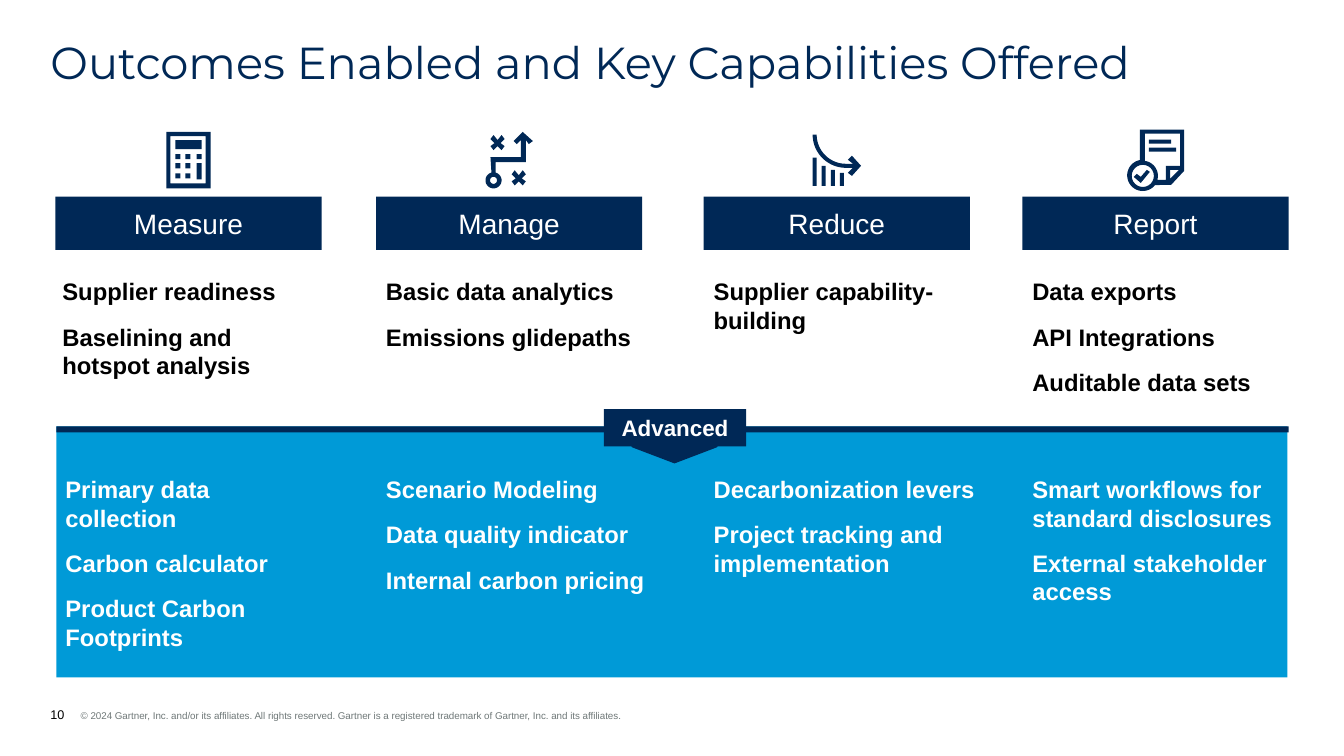
import math

import pptx
import pptx.dml.color
import pptx.enum.shapes
import pptx.enum.text
import pptx.oxml.ns
import pptx.util
from lxml import etree

PX = 9144  # EMU in one px, 100 px to the inch

NAVY = pptx.dml.color.RGBColor(0x00, 0x28, 0x56)
BLUE = pptx.dml.color.RGBColor(0x00, 0x9A, 0xD7)
GREY = pptx.dml.color.RGBColor(0x6F, 0x78, 0x78)
BLACK = pptx.dml.color.RGBColor(0x00, 0x00, 0x00)
WHITE = pptx.dml.color.RGBColor(0xFF, 0xFF, 0xFF)

SHAPE = pptx.enum.shapes.MSO_SHAPE
ANCHOR = pptx.enum.text.MSO_ANCHOR
ALIGN = pptx.enum.text.PP_ALIGN


def emu(*lengths):
    return [pptx.util.Emu(round(length * PX)) for length in lengths]


def set_font(font, size, color, bold=False, name="Arial"):
    font.name, font.bold = name, bold
    font.size = pptx.util.Pt(size)
    font.color.rgb = color


def set_frame(frame, anchor, margins):
    """Margins are left, top, right and bottom in px."""
    frame.word_wrap = True
    frame.auto_size = pptx.enum.text.MSO_AUTO_SIZE.NONE
    frame.vertical_anchor = anchor
    (frame.margin_left, frame.margin_top,
     frame.margin_right, frame.margin_bottom) = emu(*margins)


def paint(shape, color):
    shape.shadow.inherit = False
    shape.fill.solid()
    shape.fill.fore_color.rgb = color
    shape.line.fill.background()


def add_block(page, box, color, kind=SHAPE.RECTANGLE):
    block = page.shapes.add_shape(kind, *emu(*box))
    paint(block, color)
    return block


def add_label(page, box, text, size, bold=False):
    frame = add_block(page, box, NAVY).text_frame
    set_frame(frame, ANCHOR.MIDDLE, (0, 5, 0, 5))
    para = frame.paragraphs[0]
    para.text = text
    para.alignment = ALIGN.CENTER
    set_font(para.runs[0].font, size, WHITE, bold)


def add_list(page, box, items, color):
    frame = page.shapes.add_textbox(*emu(*box)).text_frame
    set_frame(frame, ANCHOR.TOP, (10, 5, 0, 5))
    for index, item in enumerate(items):
        para = frame.add_paragraph() if index else frame.paragraphs[0]
        para.text = item
        para.space_before = pptx.util.Pt(6 if index else 0)
        para.space_after = pptx.util.Pt(6)
        set_font(para.runs[0].font, 17, color, bold=True)


def rect(left, top, width, height):
    right, bottom = left + width, top + height
    return [(left, top), (right, top), (right, bottom), (left, bottom)]


def arc(x, y, radius, start=0, end=360, steps=24):
    """Points on a circle; degrees run clockwise from the right."""
    turns = [math.radians(start + (end - start) * step / steps) for step in range(steps + 1)]
    return [(x + radius * math.cos(turn), y + radius * math.sin(turn)) for turn in turns]


def cross(x, y):
    offsets = [(-7, 3), (-3, 0), (-7, -4), (-4, -8), (0, -3), (4, -8),
               (7, -4), (3, 0), (7, 3), (4, 7), (0, 3), (-4, 7)]
    return [(x + right, y + down) for right, down in offsets]


def calculator_icon():
    keys = [rect(x, y, 5, 5) for x in (9, 19, 30) for y in (22, 31, 41) if x < 30 or y == 22]
    return [rect(0, 0, 44, 56), rect(4, 4, 35, 47), rect(9, 8, 26, 9), rect(30, 31, 5, 16), *keys]


def route_icon():
    path = [(47, 9), (43, 12), (40, 8), (40, 30), (10, 30), *arc(8, 48, 8, -75, 255),
            (5, 25), (35, 25), (35, 8), (31, 12), (28, 9), (37, 0)]
    return [path, arc(8, 48, 3.5), cross(12, 11), cross(33, 46)]


def decline_icon():
    bars = [rect(x, top, 4, 51 - top) for x, top in ((0, 23), (9, 31), (18, 35), (27, 38))]
    arrow = [(39, 21), (35, 25), (40, 29), *arc(33, 0, 29, 90, 180), *arc(33, 0, 33, 180, 90),
             (40, 33), (35, 38), (39, 41), (48, 31)]
    return [arrow, *bars]


def report_icon():
    outline = [(57, 0), (57, 41), (44, 55), *arc(16, 45.5, 15.5, 38, 259), (13, 0)]
    sheet = [(18, 4), *arc(16, 46, 15, -82, 15), (39, 50), (39, 36), (53, 36), (53, 4)]
    fold = [(52, 40), (43, 40), (43, 49)]
    check = [(14, 47), (10, 44), (7, 47), (14, 53), (23, 42), (20, 40)]
    return [outline, sheet, arc(16, 46, 11), fold, check, rect(22, 10, 22, 4), rect(22, 18, 27, 4)]


def add_icon(page, center_x, center_y, contours):
    """Draw the contours as one shape, centred on a point."""
    points = [point for contour in contours for point in contour]
    width, height = (max(axis) for axis in zip(*points))
    scaled = [[emu(*point) for point in contour] for contour in contours]
    builder = page.shapes.build_freeform(*scaled[0][0], scale=1.0)
    for contour in scaled:
        builder.move_to(*contour[0])
        builder.add_line_segments(contour[1:], close=True)
    paint(builder.convert_to_shape(*emu(center_x - width / 2, center_y - height / 2)), NAVY)


COLUMNS = [  # left, list width, shift of the basic list, heading, icon, basic, advanced
    (55, 261, -3, "Measure", calculator_icon,
     ["Supplier readiness", "Baselining and hotspot analysis"],
     ["Primary data collection", "Carbon calculator", "Product Carbon Footprints"]),
    (373, 268, 0, "Manage", route_icon,
     ["Basic data analytics", "Emissions glidepaths"],
     ["Scenario Modeling", "Data quality indicator", "Internal carbon pricing"]),
    (698, 280, 0, "Reduce", decline_icon,
     ["Supplier capability-building"],
     ["Decarbonization levers", "Project tracking and implementation"]),
    (1014, 254, 0, "Report", report_icon,
     ["Data exports", "API Integrations", "Auditable data sets"],
     ["Smart workflows for standard disclosures", "External stakeholder access"]),
]


def add_column(page, top, column):
    left, width, shift, heading, icon, basic, advanced = column
    add_icon(page, left + 132, top + 30, icon())
    add_label(page, (left, top + 66, 264, 53), heading, 20)
    add_list(page, (left + shift, top + 141, width, 130), basic, BLACK)
    add_list(page, (left, top + 337, width, 187), advanced, WHITE)


def add_advanced_band(page, left, top, width, height):
    add_block(page, (left, top, width, height), BLUE)
    add_block(page, (left, top, width + 1, 6), NAVY)
    pointer = add_block(page, (left + 571, top + 20, 84, 16), NAVY, SHAPE.ISOSCELES_TRIANGLE)
    pointer.rotation = 180
    pointer.line.color.rgb = NAVY
    pointer.line.width = pptx.util.Pt(1)
    add_label(page, (left + 543, top - 17, 141, 37), "Advanced", 16, bold=True)


def add_title(page, box, text):
    title = page.shapes.title
    title.left, title.top, title.width, title.height = emu(*box)
    set_frame(title.text_frame, ANCHOR.TOP, (0, 0, 0, 0))
    para = title.text_frame.paragraphs[0]
    para.text = text
    para.alignment = ALIGN.LEFT
    para.line_spacing = 0.9
    set_font(para.runs[0].font, 32, NAVY, name="Montserrat")


def add_footer(page, box, number, notice):
    frame = page.shapes.add_textbox(*emu(*box)).text_frame
    set_frame(frame, ANCHOR.BOTTOM, (0, 0, 0, 0))
    para = frame.paragraphs[0]
    indent, stop = emu(30, 32)
    properties = para._p.get_or_add_pPr()
    properties.set("marL", str(indent))
    properties.set("indent", str(-indent))
    tabs = etree.SubElement(properties, pptx.oxml.ns.qn("a:tabLst"))
    etree.SubElement(tabs, pptx.oxml.ns.qn("a:tab"), pos=str(stop), algn="l")
    for text, size, color in ((number, 9, BLACK), ("\t" + notice, 7, GREY)):
        span = para.add_run()
        span.text = text
        set_font(span.font, size, color)


def main():
    deck = pptx.Presentation()
    deck.slide_width, deck.slide_height = emu(1333, 750)
    page = deck.slides.add_slide(deck.slide_layouts[5])
    add_title(page, (50, 40, 1233, 48), "Outcomes Enabled and Key Capabilities Offered")
    add_advanced_band(page, 56, 423, 1221, 249)
    for column in COLUMNS:
        add_column(page, 129, column)
    add_footer(page, (50, 701, 785, 15), "10",
               "© 2024 Gartner, Inc. and/or its affiliates. All rights reserved. "
               "Gartner is a registered trademark of Gartner, Inc. and its affiliates.")
    deck.save("out.pptx")


if __name__ == "__main__":
    main()
